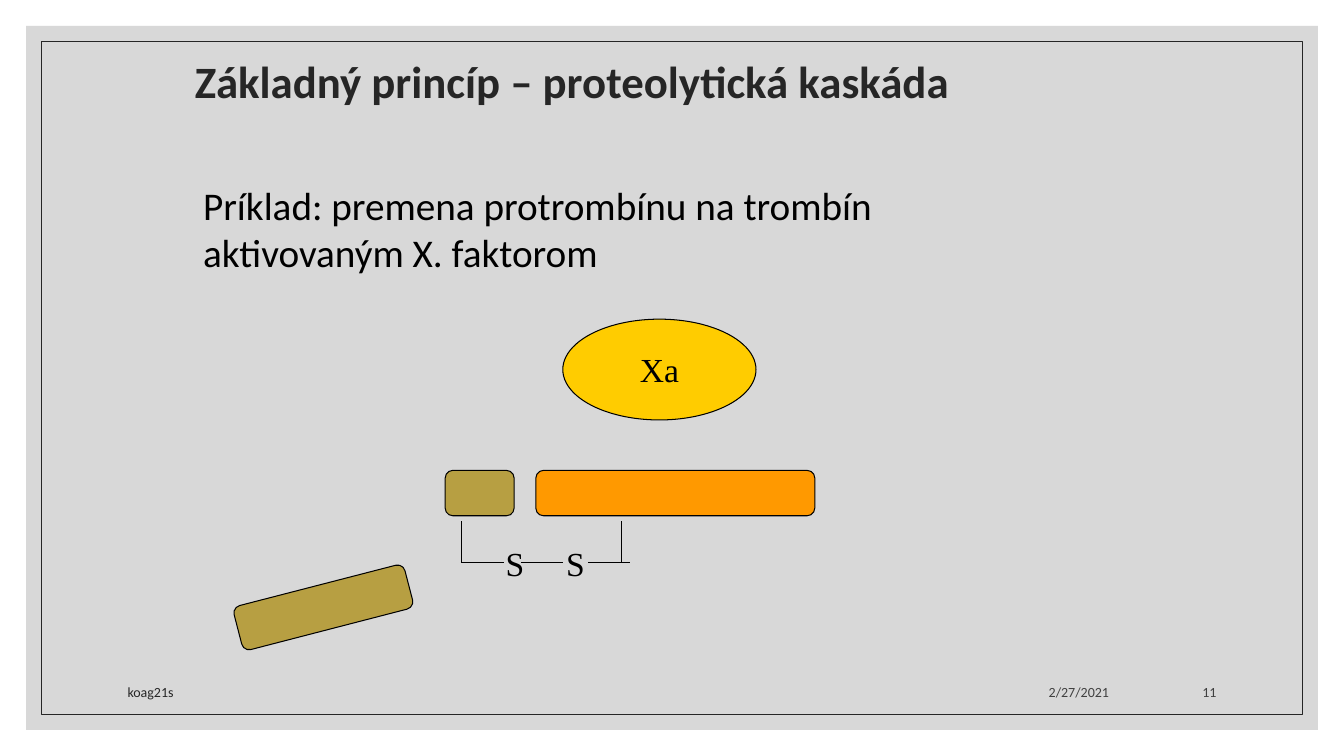
import pptx
import pptx.util
import pptx.dml.color
import pptx.enum.shapes
import pptx.enum.text
import pptx.oxml
import pptx.oxml.ns
from lxml import etree

RGB = pptx.dml.color.RGBColor
KIND = pptx.enum.shapes.MSO_SHAPE
ALIGN = pptx.enum.text.PP_ALIGN
ANCHOR = pptx.enum.text.MSO_ANCHOR
qn = pptx.oxml.ns.qn

BLACK = RGB(0x00, 0x00, 0x00)
INK = RGB(0x26, 0x26, 0x26)
GREY = RGB(0x40, 0x40, 0x40)
PANEL = RGB(0xBF, 0xBF, 0xBF)
OLIVE = RGB(0xB7, 0x9F, 0x42)
ORANGE = RGB(0xFF, 0x99, 0x00)
YELLOW = RGB(0xFF, 0xCC, 0x00)

COLS, ROWS = 160, 90
SANS, SERIF = "Calibri", "Times New Roman"


class Board:
    def __init__(self, deck):
        self.deck = deck
        self.slide = deck.slides.add_slide(deck.slide_layouts[5])
        self.shapes = self.slide.shapes

    def place(self, col, row, wide=0, high=0):
        across = self.deck.slide_width / COLS
        down = self.deck.slide_height / ROWS
        return [round(n) for n in (col * across, row * down, wide * across, high * down)]

    def shape(self, kind, box, fill=None, line=None, width=0.75, turn=0, alpha=None):
        item = self.shapes.add_shape(kind, *self.place(*box))
        item.shadow.inherit = False
        item.rotation = turn
        if fill is None:
            item.fill.background()
        else:
            item.fill.solid()
            item.fill.fore_color.rgb = fill
        if alpha:
            color = item.element.spPr.find(".//" + qn("a:srgbClr"))
            etree.SubElement(color, qn("a:alpha"), val=str(alpha * 1000))
        if line is None:
            item.line.fill.background()
        else:
            item.line.color.rgb = line
            item.line.width = pptx.util.Pt(width)
        return item

    def frame(self, inset, **style):
        box = inset, inset, COLS - 2 * inset, ROWS - 2 * inset
        return self.shape(KIND.RECTANGLE, box, **style)

    def style(self, item, text, size, font, color, bold=False,
              align=ALIGN.LEFT, anchor=ANCHOR.TOP):
        body = item.text_frame
        body.word_wrap = True
        body.vertical_anchor = anchor
        body.text = text
        para = body.paragraphs[0]
        para.alignment = align
        for run in para.runs:
            run.font.size = pptx.util.Pt(size)
            run.font.name = font
            run.font.bold = bold
            run.font.color.rgb = color
        return para

    def text(self, box, *args, **style):
        item = self.shapes.add_textbox(*self.place(*box))
        return self.style(item, *args, **style)

    def title(self, box, *args, **style):
        item = self.shapes.title
        item.left, item.top, item.width, item.height = self.place(*box)
        self.style(item, *args, **style).line_spacing = 0.9
        item.element.getparent().append(item.element)

    def line(self, start, end):
        ends = self.place(*start)[:2] + self.place(*end)[:2]
        kind = pptx.enum.shapes.MSO_CONNECTOR.STRAIGHT
        item = self.shapes.add_connector(kind, *ends)
        item.line.color.rgb = BLACK
        item.line.width = pptx.util.Pt(0.75)
        etree.SubElement(item.element.spPr, qn("a:effectLst"))

    def tabs(self, para, stops):
        stack = etree.SubElement(para._p.get_or_add_pPr(), qn("a:tabLst"))
        for stop in stops:
            place = str(pptx.util.Inches(stop))
            etree.SubElement(stack, qn("a:tab"), pos=place, algn="l")


def main():
    deck = pptx.Presentation()
    deck.slide_width = pptx.util.Inches(13.33)
    deck.slide_height = pptx.util.Inches(7.5)
    board = Board(deck)

    board.frame(3.1, fill=PANEL, alpha=60)
    board.frame(4.9, line=INK, width=0.5)
    board.title((22, 5, 109, 10), "Základný princíp – proteolytická kaskáda",
                32, SANS, INK, bold=True, anchor=ANCHOR.MIDDLE)
    board.text((23, 21, 102, 14),
               "Príklad: premena protrombínu na trombín aktivovaným X. faktorom",
               28, SANS, BLACK).space_before = pptx.util.Pt(9)

    for col, row, wide, fill, turn in (
        (53, 56, 8.2, OLIVE, 0),
        (63.8, 56, 33.2, ORANGE, 0),
        (28, 69.6, 21, OLIVE, 345.5),
    ):
        board.shape(KIND.ROUNDED_RECTANGLE, (col, row, wide, 5.4),
                    fill=fill, line=BLACK, turn=turn)

    bond = board.text((56, 64, 23, 6), "\tS\tS", 24, SERIF, BLACK)
    board.tabs(bond, (0.25, 0.85))
    for col in (70, 62, 55):
        board.line((col, 67), (col + 5, 67))
    for col in (74, 55):
        board.line((col, 67), (col, 62))

    board.shape(KIND.OVAL, (67, 38, 23, 12), fill=YELLOW, line=BLACK)
    board.text((75, 41, 9, 6), "Xa", 24, SERIF, BLACK)

    for col, wide, text, color, align in (
        (95.3, 37.9, "2/27/2021", GREY, ALIGN.RIGHT),
        (14, 76.3, "koag21s", INK, ALIGN.LEFT),
        (135, 11, "11", GREY, ALIGN.RIGHT),
    ):
        board.text((col, 79.2, wide, 4.8), text, 10, SANS, color,
                   align=align, anchor=ANCHOR.BOTTOM)

    deck.save("out.pptx")


if __name__ == "__main__":
    main()
